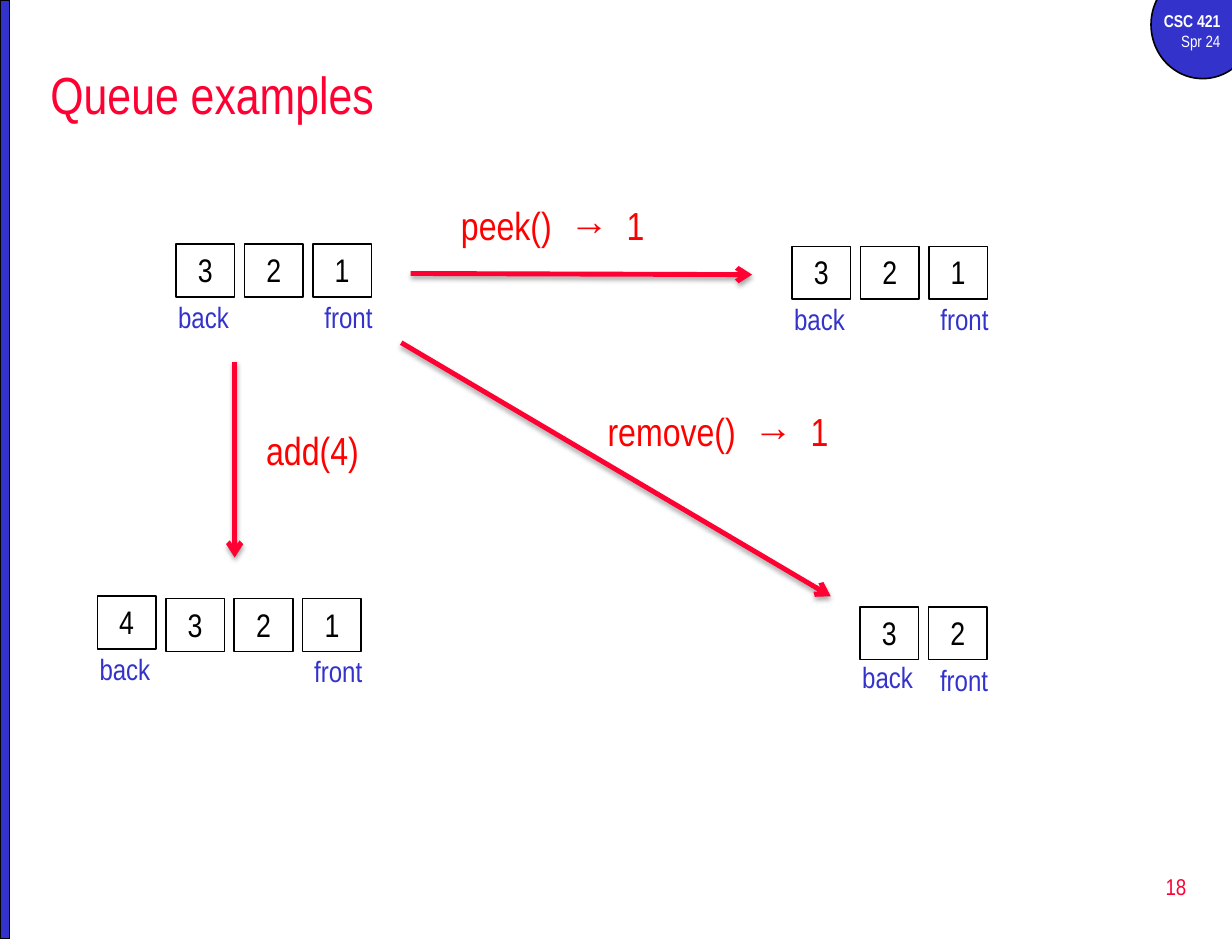
import dataclasses

import lxml.etree
import pptx
import pptx.dml.color
import pptx.enum.shapes
import pptx.enum.text
import pptx.oxml.ns
import pptx.util

Inches = pptx.util.Inches
Pt = pptx.util.Pt
Shape = pptx.enum.shapes.MSO_SHAPE
Align = pptx.enum.text.PP_ALIGN
Anchor = pptx.enum.text.MSO_ANCHOR
Fit = pptx.enum.text.MSO_AUTO_SIZE


@dataclasses.dataclass(frozen=True)
class Theme:
    font: str = "Arial Narrow"
    blue: str = "3333CC"
    rose: str = "FF0033"
    red: str = "FF0000"
    black: str = "000000"
    white: str = "FFFFFF"
    title: float = 32
    call: float = 24
    cell: float = 20
    tag: float = 18
    page: float = 14
    course: float = 10.5
    term: float = 10


THEME = Theme()
CELL_W, CELL_H = 0.5, 0.45
PITCH = 7 / 12
TAG_DROP = 0.42


def rgb(code):
    return pptx.dml.color.RGBColor.from_string(code)


def write(shape, lines, align=Align.LEFT, anchor=Anchor.TOP, wrap=True):
    """Fill a shape with lines of (text, size, colour, bold)."""
    frame = shape.text_frame
    form = {"word_wrap": wrap, "auto_size": Fit.NONE, "vertical_anchor": anchor}
    for name, value in form.items():
        setattr(frame, name, value)
    for i, (text, size, color, bold) in enumerate(lines):
        para = frame.add_paragraph() if i else frame.paragraphs[0]
        para.alignment = align
        run = para.add_run()
        run.text = text
        font = {"name": THEME.font, "size": Pt(size), "bold": bold}
        for name, value in font.items():
            setattr(run.font, name, value)
        run.font.color.rgb = rgb(color)


def add_text(shapes, box, lines, **form):
    write(shapes.add_textbox(*map(Inches, box)), lines, **form)


def add_block(shapes, kind, box, fill=None):
    block = shapes.add_shape(kind, *map(Inches, box))
    block.shadow.inherit = False
    if fill:
        block.fill.solid()
        block.fill.fore_color.rgb = rgb(fill)
    else:
        block.fill.background()
    block.line.color.rgb = rgb(THEME.black)
    block.line.width = Pt(1)
    return block


def add_queue(slide, left, top, items, lift=0, tag_lift=0):
    """Draw one queue; lift raises its back cell, tag_lift its back tag."""
    shapes = slide.shapes.add_group_shape().shapes
    for i, item in enumerate(items):
        y = top if i else top - lift
        box = (left + i * PITCH, y, CELL_W, CELL_H)
        cell = add_block(shapes, Shape.RECTANGLE, box)
        write(cell, [(item, THEME.cell, THEME.black, False)], Align.CENTER)
    last = left + (len(items) - 1) * PITCH
    tags = [("front", last, 0), ("back", left - 0.08, tag_lift)]
    for text, x, rise in tags:
        add_text(shapes, (x, top + TAG_DROP - rise, 0.67, 0.4),
                 [(text, THEME.tag, THEME.blue, False)])


def add_child(parent, tag, **attrs):
    return lxml.etree.SubElement(parent, pptx.oxml.ns.qn(tag), attrs)


def add_arrow(slide, start, end):
    kind = pptx.enum.shapes.MSO_CONNECTOR.STRAIGHT
    arrow = slide.shapes.add_connector(kind, *map(Inches, start + end))
    arrow.line.color.rgb = rgb(THEME.rose)
    arrow.line.width = Pt(3)
    add_child(arrow.line._get_or_add_ln(), "a:tailEnd", type="arrow")
    effects = add_child(arrow._element.spPr, "a:effectLst")
    shadow = add_child(effects, "a:outerShdw", blurRad=str(Pt(3.1)),
                       dist=str(Pt(1.8)), dir="5400000", rotWithShape="0")
    color = add_child(shadow, "a:srgbClr", val=THEME.black)
    add_child(color, "a:alpha", val="35000")


def add_frame(slide):
    """Draw the side bar, course badge and page number."""
    shapes = slide.shapes
    add_block(shapes, Shape.OVAL, (9.81, -0.25, 0.88, 0.92), THEME.blue)
    add_text(shapes, (9.67, 0.04, 0.83, 0.46),
             [("CSC 421", THEME.course, THEME.white, True),
              ("Spr 24", THEME.term, THEME.white, False)], align=Align.RIGHT)
    add_block(shapes, Shape.RECTANGLE, (0, 0, 0.08, 8), THEME.blue)
    add_text(shapes, (8.02, 7.29, 2.19, 0.53),
             [("18", THEME.page, THEME.rose, False)],
             align=Align.RIGHT, anchor=Anchor.MIDDLE)


def set_title(slide, text):
    title = slide.shapes.title
    place = {"left": 0.33, "top": 0.42, "width": 9.92, "height": 0.75}
    for name, value in place.items():
        setattr(title, name, Inches(value))
    write(title, [(text, THEME.title, THEME.rose, False)], anchor=Anchor.MIDDLE)


def main():
    deck = pptx.Presentation()
    deck.slide_width, deck.slide_height = Inches(10.5), Inches(8)
    slide = deck.slides.add_slide(deck.slide_layouts[5])
    add_frame(slide)
    set_title(slide, "Queue examples")

    add_queue(slide, 1.5, 2.08, "321")
    add_queue(slide, 0.83, 5.1, "4321", lift=0.02, tag_lift=0.02)
    add_queue(slide, 7.33, 5.17, "32", tag_lift=0.02)
    add_queue(slide, 6.75, 2.1, "321")

    calls = [
        ("peek()  →  1", (3.83, 1.67, 1.92, 0.51), (3.5, 2.33), (6.41, 2.34)),
        ("add(4)", (2.17, 3.58, 1.17, 0.51), (2, 3.08), (2, 4.75)),
        ("remove()  →  1", (5.08, 3.42, 2.5, 0.51), (3.42, 2.92), (7.08, 5.08)),
    ]
    for text, box, start, end in calls:
        add_text(slide.shapes, box, [(text, THEME.call, THEME.red, False)])
        add_arrow(slide, start, end)
    deck.save("out.pptx")


if __name__ == "__main__":
    main()
